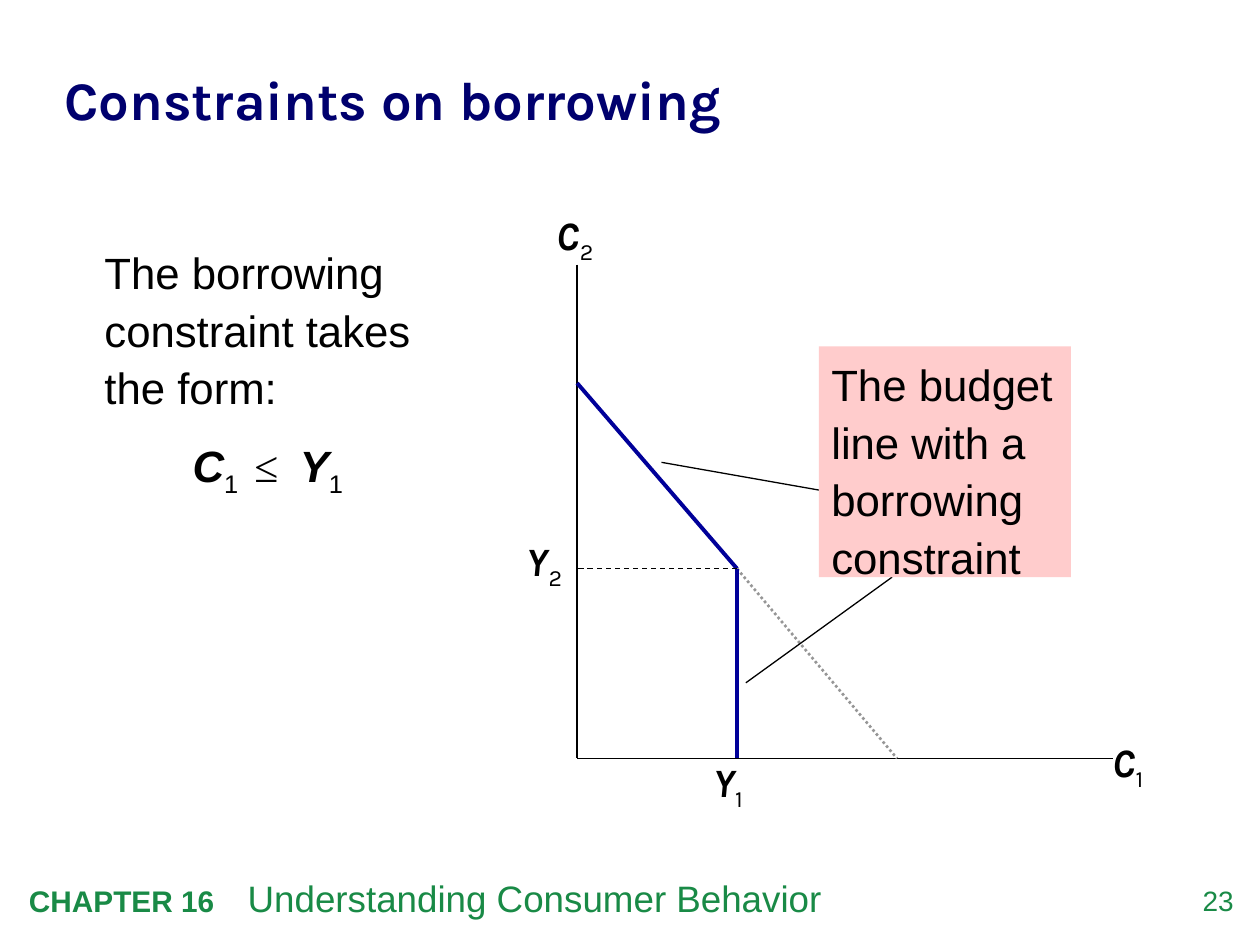
from lxml.etree import SubElement
from pptx import Presentation
from pptx.dml.color import RGBColor
from pptx.enum.dml import MSO_LINE
from pptx.enum.shapes import MSO_CONNECTOR, MSO_SHAPE
from pptx.enum.text import MSO_ANCHOR, PP_ALIGN
from pptx.oxml.ns import qn
from pptx.util import Pt

BLACK, NAVY, GREEN, GREY = "000000", "000099", "198A46", "969696"


def color(value):
    return RGBColor.from_string(value)


def write(para, runs, **base):
    """Add (text, format) runs; sub lowers a run and spc widens it, in 1/100 pt."""
    for text, extra in runs:
        look = {**base, **extra}
        run = para.add_run()
        run.text = text
        run.font.color.rgb = color(look.pop("ink", BLACK))
        props = run._r.get_or_add_rPr()
        if look.pop("sub", False):
            props.set("baseline", "-25000")
        if "spc" in look:
            props.set("spc", str(look.pop("spc")))
        for key, value in look.items():
            setattr(run.font, key, value)


deck = Presentation()
deck.slide_width, deck.slide_height = Pt(720), Pt(540)
slide = deck.slides.add_slide(deck.slide_layouts[6])
shapes = slide.shapes

# Text boxes: place, insets, wrap
frames = {}
for name, place, inset, wrap in [
    ("number", (665.3, 504.7, 39.6, 23), (0, 0, 0, 0), True),
    ("footer", (9.4, 496.8, 589, 32.4), (7.2, 3.6, 7.2, 3.6), True),
    ("title", (36.7, 18.7, 649.4, 74.2), (0, 0, 0, 0), True),
    ("body", (52.6, 133.9, 200.9, 149.8), (7.2, 3.6, 7.2, 3.6), True),
    ("C1", (635.8, 421.2, 30.2, 31), (0, 0, 0, 3.6), False),
    ("C2", (318.2, 120.2, 30.2, 31), (0, 0, 0, 3.6), False),
    ("Y1", (407.5, 432.7, 30.2, 31), (0, 0, 0, 3.6), False),
    ("Y2", (301, 306.7, 30.2, 31), (0, 0, 0, 3.6), False),
]:
    frame = shapes.add_textbox(*map(Pt, place)).text_frame
    frame.word_wrap = wrap
    for side, gap in zip(("left", "top", "right", "bottom"), inset):
        setattr(frame, "margin_" + side, Pt(gap))
    frames[name] = frame

italic = {"bold": True, "italic": True}
sub = {"sub": True}

para = frames["number"].paragraphs[0]
para.alignment = PP_ALIGN.RIGHT
write(para, [("23", {})], name="Arial", size=Pt(16), ink=GREEN)

para = frames["footer"].paragraphs[0]
tabs = SubElement(para._p.get_or_add_pPr(), qn("a:tabLst"))
SubElement(tabs, qn("a:tab"), pos=str(Pt(125)), algn="l")
write(para, [("CHAPTER 16\t", {"size": Pt(17), "bold": True}),
             ("Understanding Consumer Behavior", {"size": Pt(21)})],
      name="Arial", ink=GREEN)

frames["title"].vertical_anchor = MSO_ANCHOR.MIDDLE
para = frames["title"].paragraphs[0]
para.line_spacing = 1.05
write(para, [("Constraints on borrowing", {})],
      name="Karla", size=Pt(31), bold=True, ink="00006E")

large = {"name": "Arial", "size": Pt(25)}
para = frames["body"].paragraphs[0]
para.line_spacing = 1.1
write(para, [("The borrowing constraint takes the form:", {})], **large)
para = frames["body"].add_paragraph()
para.line_spacing = 1.1
para.space_before = Pt(11)
para.alignment = PP_ALIGN.CENTER
write(para, [("C", italic), ("1", sub),
             (" ≤ ", {"name": "Times New Roman", "spc": 300}),
             ("Y", italic), ("1", sub)], **large)

for name in ("C1", "C2", "Y1", "Y2"):
    write(frames[name].paragraphs[0], [(name[0], italic), (name[1], sub)],
          name="Karla", size=Pt(23))

# Axes, budget line, guides and callout leaders
left, base = 329.8, 433.4
kink_x, kink_y = 421.2, 325
for start, end, ink, width, dash in [
    ((left, 151.2), (left, base), BLACK, 1, None),
    ((left, base), (635.8, base), BLACK, 1, None),
    ((left, 218.9), (kink_x, kink_y), NAVY, 2.25, None),
    ((kink_x, kink_y), (512.6, base), GREY, 1.5, MSO_LINE.ROUND_DOT),
    ((kink_x, kink_y), (kink_x, base), NAVY, 2.25, None),
    ((kink_x, kink_y), (left, kink_y), BLACK, 0.75, MSO_LINE.DASH),
    ((426.2, 390.2), (509.8, 329.8), BLACK, 0.75, None),
    ((378, 264.2), (480.2, 282.2), BLACK, 0.75, None),
]:
    line = shapes.add_connector(MSO_CONNECTOR.STRAIGHT, *map(Pt, start + end))
    line.line.color.rgb = color(ink)
    line.line.width = Pt(width)
    if dash:
        line.line.dash_style = dash
    SubElement(line._element.spPr, qn("a:effectLst"))

note = shapes.add_shape(MSO_SHAPE.RECTANGLE, Pt(468), Pt(198), Pt(144), Pt(131.8))
note.shadow.inherit = False
note.fill.solid()
note.fill.fore_color.rgb = color("FFCCCC")
note.line.fill.background()
frame = note.text_frame
frame.word_wrap = True
frame.vertical_anchor = MSO_ANCHOR.TOP
para = frame.paragraphs[0]
para.alignment = PP_ALIGN.LEFT
para.line_spacing = 1.1
write(para, [("The budget line with a borrowing constraint", {})], **large)

deck.save("out.pptx")
